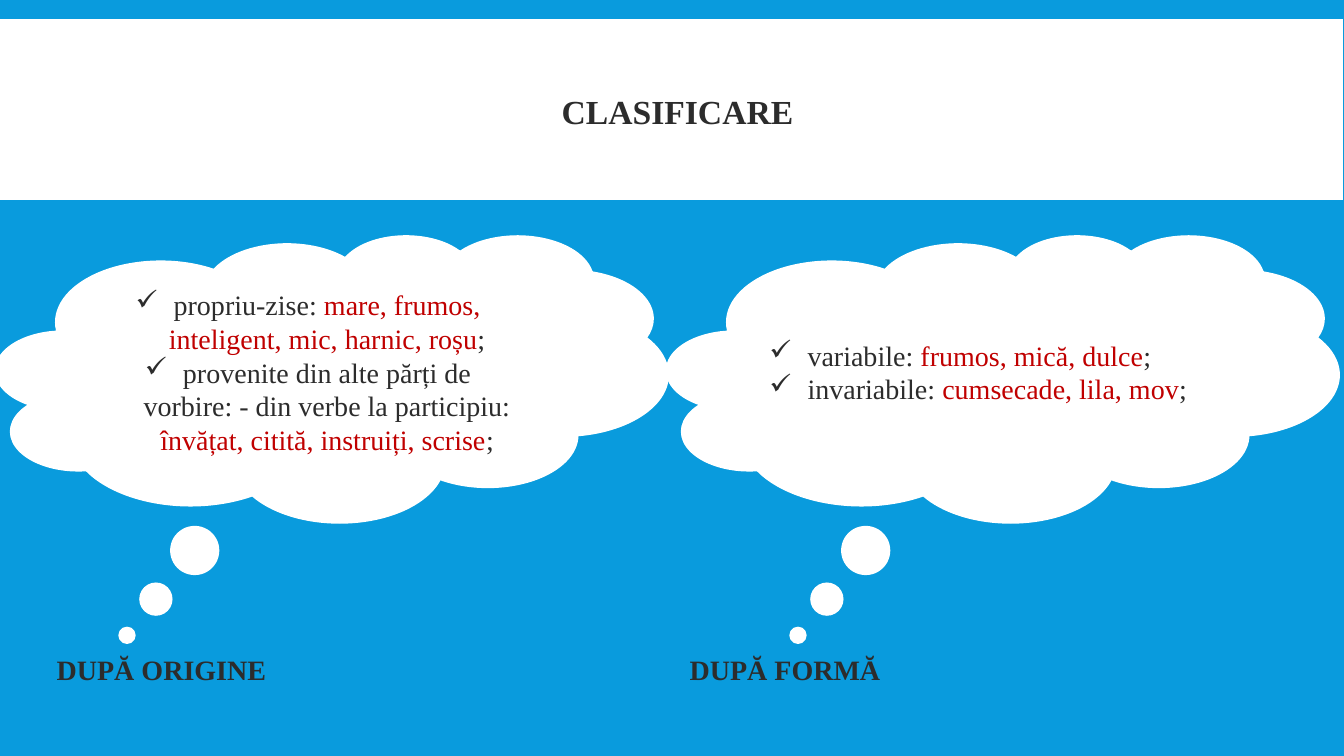
import pptx
import pptx.util
import pptx.dml.color
import pptx.enum.shapes
import pptx.enum.text
import lxml.etree
from pptx.oxml.ns import qn

RGB = pptx.dml.color.RGBColor
BLUE = RGB(0x09, 0x9B, 0xDD)
WHITE = RGB(0xFF, 0xFF, 0xFF)
DARK = RGB(0x2C, 0x2C, 0x2C)
RED = RGB(0xC0, 0x00, 0x00)
FONT = "Times New Roman"
SCALE = 914400 / 100.8  # EMU per px
SHAPE = pptx.enum.shapes.MSO_SHAPE
ALIGN = pptx.enum.text.PP_ALIGN
MIDDLE = pptx.enum.text.MSO_ANCHOR.MIDDLE


def px(*sizes):
    return [pptx.util.Emu(round(size * SCALE)) for size in sizes]


def style(run, size, color, bold=False):
    run.font.name = FONT
    run.font.size = pptx.util.Pt(size)
    run.font.color.rgb = color
    run.font.bold = bold


# Slide and background
deck = pptx.Presentation()
deck.slide_width, deck.slide_height = px(1344, 756)
slide = deck.slides.add_slide(deck.slide_layouts[5])
slide.background.fill.solid()
slide.background.fill.fore_color.rgb = BLUE

# White band, with the title in front of it
band = slide.shapes.add_shape(SHAPE.RECTANGLE, *px(0, 19, 1343, 181))
band.shadow.inherit = False
band.fill.solid()
band.fill.fore_color.rgb = WHITE
band.line.fill.background()

title = slide.shapes.title
band.element.addnext(title.element)
title.left, title.top, title.width, title.height = px(133, 31, 1089, 166)
title.text_frame.text = "CLASIFICARE"
title.text_frame.vertical_anchor = MIDDLE
head = title.text_frame.paragraphs[0]
head.alignment = ALIGN.CENTER
head.line_spacing = 0.85
style(head.runs[0], 24, DARK, True)

# Thought clouds: left edge, alignment, (lead, examples) per bullet
clouds = [
    (-4, ALIGN.CENTER, [
        ("propriu-zise: ", "mare, frumos, inteligent, mic, harnic, roșu"),
        ("provenite din alte părți de vorbire: - din verbe la participiu: ",
         "învățat, citită, instruiți, scrise"),
    ]),
    (667, ALIGN.JUSTIFY, [
        ("variabile: ", "frumos, mică, dulce"),
        ("invariabile: ", "cumsecade, lila, mov"),
    ]),
]
indent = px(38)[0]
for left, align, items in clouds:
    cloud = slide.shapes.add_shape(SHAPE.CLOUD_CALLOUT, *px(left, 235, 672, 287))
    cloud.adjustments[0] = -0.305
    cloud.adjustments[1] = 0.895
    cloud.shadow.inherit = False
    cloud.fill.solid()
    cloud.fill.fore_color.rgb = WHITE
    cloud.line.color.rgb = WHITE
    cloud.line.width = pptx.util.Pt(1)
    frame = cloud.text_frame
    frame.word_wrap = True
    frame.vertical_anchor = MIDDLE
    for row, (lead, words) in enumerate(items):
        para = frame.add_paragraph() if row else frame.paragraphs[0]
        para.alignment = align
        for text, color in ((lead, DARK), (words, RED), (";", DARK)):
            run = para.add_run()
            run.text = text
            style(run, 20, color)
        # Hanging check mark
        props = para._p.get_or_add_pPr()
        props.set("marL", str(indent))
        props.set("indent", str(-indent))
        lxml.etree.SubElement(props, qn("a:buChar")).set("char", "✓")

# Labels under the clouds
for left, width, text in ((27, 269, "DUPĂ ORIGINE"), (601, 368, "DUPĂ FORMĂ")):
    label = slide.shapes.add_textbox(*px(left, 648, width, 44))
    label.text_frame.word_wrap = True
    label.text_frame.text = text
    para = label.text_frame.paragraphs[0]
    para.alignment = ALIGN.CENTER
    style(para.runs[0], 20, DARK, True)

deck.save("out.pptx")
